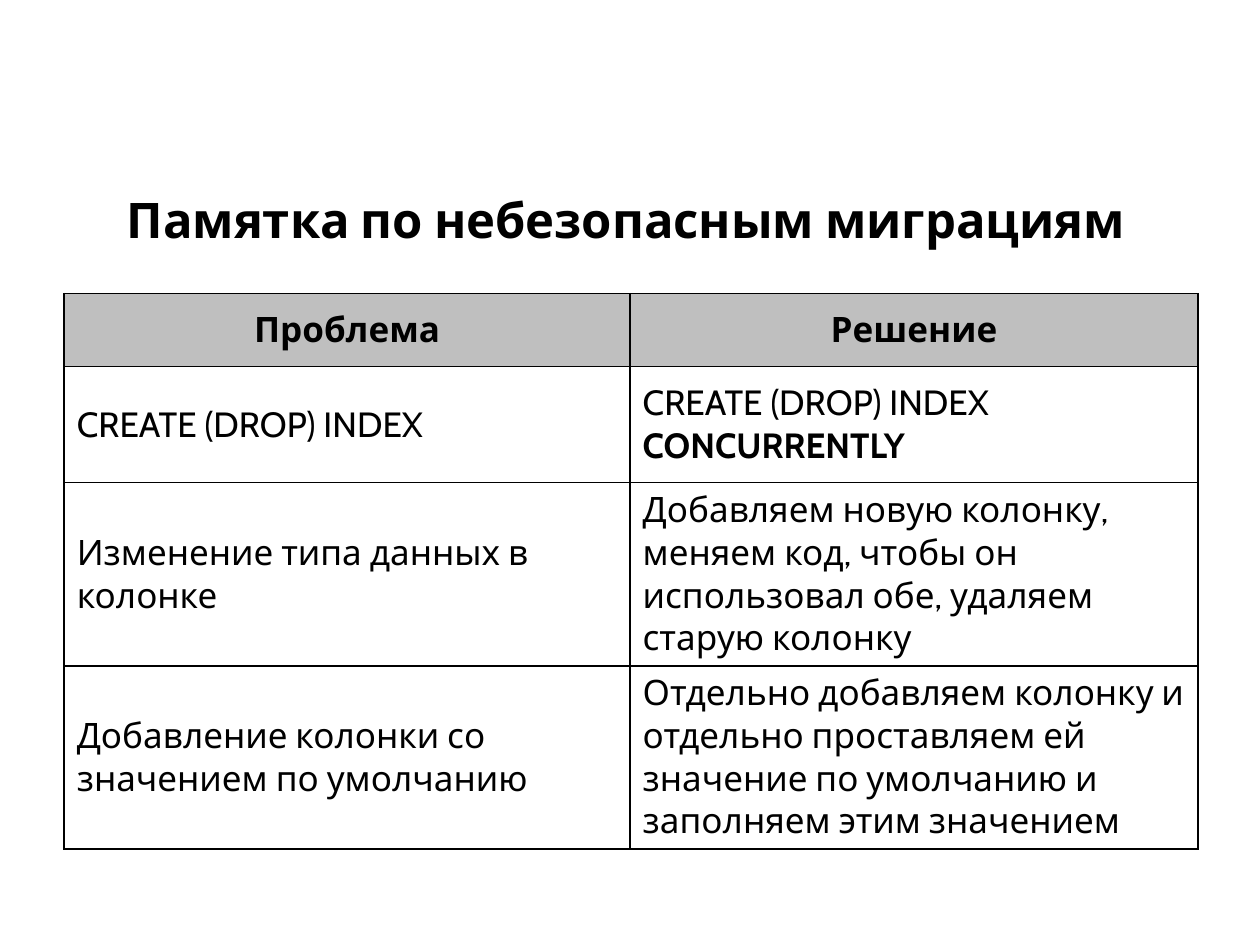
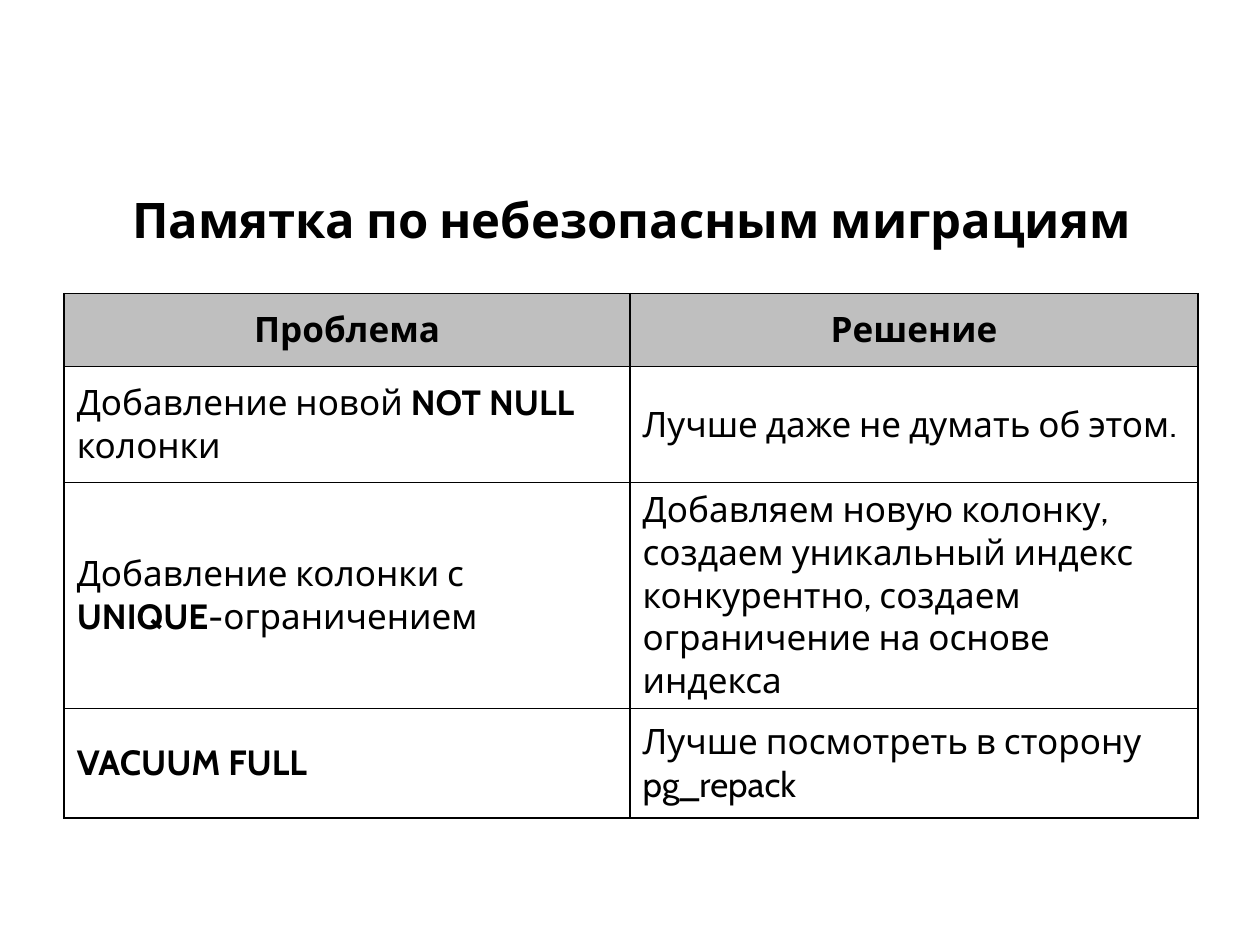
from collections import namedtuple

import pptx
import pptx.dml.color
import pptx.enum.text
import pptx.oxml
import pptx.oxml.ns
import pptx.util

Inches, Pt = pptx.util.Inches, pptx.util.Pt
RGB = pptx.dml.color.RGBColor.from_string
ALIGN, ANCHOR = pptx.enum.text.PP_ALIGN, pptx.enum.text.MSO_ANCHOR

Theme = namedtuple("Theme", "font ink header title_size cell_size rule")
THEME = Theme("Cabin", "000000", "BFBFBF", Pt(28), Pt(20), Pt(1))
Box = namedtuple("Box", "left top width height")

# Layout: inches on the slide, then shares of the memo table
SLIDE_WIDTH, SLIDE_HEIGHT = Inches(10), Inches(7.5)
TITLE_BOX = Box(Inches(0.51), Inches(1.15), Inches(9), Inches(1.18))
MEMO_TOP = TITLE_BOX.top + TITLE_BOX.height
PROBLEM_SHARE = 0.499
ROW_HEIGHTS = [Inches(h) for h in (0.58, 0.92, 1.06, 0.87)]

# Content: text between ** marks is bold
HEADINGS = ("**Проблема**", "**Решение**")
MEMOS = [
    ("Памятка по небезопасным миграциям ", Inches(4.37), [
        ("CREATE (DROP) INDEX", "CREATE (DROP) INDEX **CONCURRENTLY**"),
        ("Изменение типа данных в колонке",
         "Добавляем новую колонку, меняем код, чтобы он использовал обе, "
         "удаляем старую колонку"),
        ("Добавление колонки со значением по умолчанию",
         "Отдельно добавляем колонку и отдельно проставляем ей значение "
         "по умолчанию и заполняем этим значением"),
    ]),
    ("Памятка по небезопасным миграциям", Inches(3.8), [
        ("Добавление новой **NOT NULL **колонки",
         "Лучше даже не думать об этом."),
        ("Добавление колонки с **UNIQUE**-ограничением",
         "Добавляем новую колонку, создаем уникальный индекс конкурентно, "
         "создаем ограничение на основе индекса"),
        ("**VACUUM FULL**", "Лучше посмотреть в сторону pg_repack"),
    ]),
]


def write(text_frame, marked_text, size, align):
    """Fill the first paragraph, switching bold at each ** mark."""
    paragraph = text_frame.paragraphs[0]
    paragraph.alignment = align
    for position, part in enumerate(marked_text.split("**")):
        if part:
            run = paragraph.add_run()
            run.text = part
            run.font.name = THEME.font
            run.font.size = size
            run.font.bold = position % 2 == 1
            run.font.color.rgb = RGB(THEME.ink)


def rule_cell(cell):
    """Draw a thin rule on all four sides of a cell."""
    properties = cell._tc.get_or_add_tcPr()
    for side in ("lnL", "lnR", "lnT", "lnB"):
        properties.append(pptx.oxml.parse_xml(
            f'<a:{side} {pptx.oxml.ns.nsdecls("a")} w="{THEME.rule}">'
            f'<a:solidFill><a:srgbClr val="{THEME.ink}"/></a:solidFill>'
            f'</a:{side}>'))


def place_title(slide, box, heading):
    title = slide.shapes.title
    title.left, title.top, title.width, title.height = box
    title.text_frame.vertical_anchor = ANCHOR.MIDDLE
    write(title.text_frame, f"**{heading}**", THEME.title_size, ALIGN.CENTER)


def place_memo(slide, box, advice):
    rows = [HEADINGS, *advice]
    frame = slide.shapes.add_table(len(rows), len(HEADINGS), *box)
    memo = frame.table
    memo.first_row = memo.horz_banding = False
    problem_width = int(box.width * PROBLEM_SHARE)
    memo.columns[0].width = problem_width
    memo.columns[1].width = box.width - problem_width

    for row_index, texts in enumerate(rows):
        memo.rows[row_index].height = ROW_HEIGHTS[row_index]
        is_header = row_index == 0
        for column_index, text in enumerate(texts):
            cell = memo.cell(row_index, column_index)
            cell.vertical_anchor = ANCHOR.MIDDLE
            rule_cell(cell)
            if is_header:
                cell.fill.solid()
                cell.fill.fore_color.rgb = RGB(THEME.header)
            else:
                cell.fill.background()
            write(cell.text_frame, text, THEME.cell_size,
                  ALIGN.CENTER if is_header else ALIGN.LEFT)
    frame.height = box.height


def add_memo_slide(deck, heading, memo_height, advice):
    slide = deck.slides.add_slide(deck.slide_layouts.get_by_name("Title Only"))
    place_title(slide, TITLE_BOX, heading)
    memo_box = Box(TITLE_BOX.left, MEMO_TOP, TITLE_BOX.width, memo_height)
    place_memo(slide, memo_box, advice)


def main():
    deck = pptx.Presentation()
    deck.slide_width, deck.slide_height = SLIDE_WIDTH, SLIDE_HEIGHT
    for memo in MEMOS:
        add_memo_slide(deck, *memo)
    deck.save("out.pptx")


if __name__ == "__main__":
    main()
